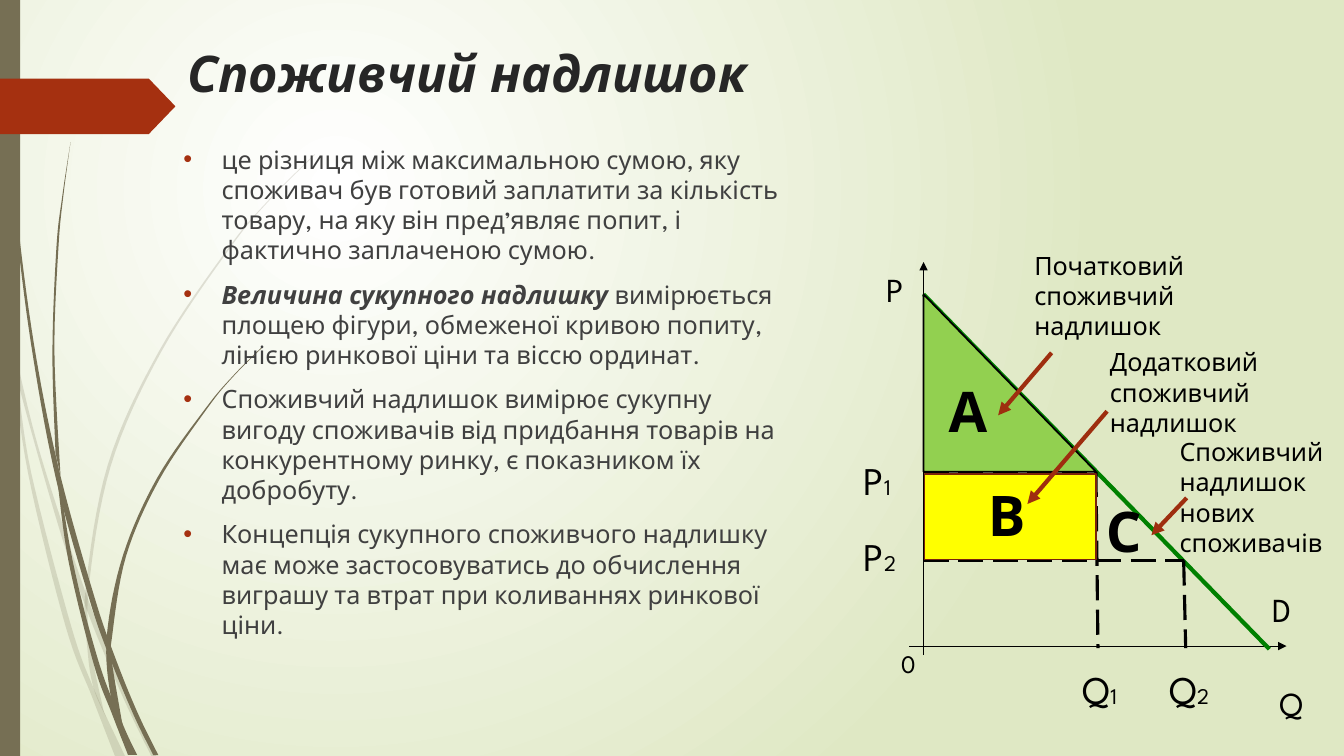
from lxml import etree
from pptx import Presentation
from pptx.dml.color import RGBColor
from pptx.enum.dml import MSO_LINE
from pptx.enum.shapes import MSO_CONNECTOR, MSO_SHAPE
from pptx.enum.text import MSO_ANCHOR, PP_ALIGN
from pptx.oxml.ns import qn
from pptx.util import Cm, Pt

STRAIGHT = MSO_CONNECTOR.STRAIGHT
RECTANGLE, TRIANGLE = MSO_SHAPE.RECTANGLE, MSO_SHAPE.ISOSCELES_TRIANGLE
PENTAGON = MSO_SHAPE.PENTAGON
LONG_DASH = MSO_LINE.LONG_DASH
TOP, LEFT = MSO_ANCHOR.TOP, PP_ALIGN.LEFT

FONT = "League Spartan"
BLACK, OLIVE, RED, ARROW = "000000", "766F54", "A53010", "9E2E0F"

# Content: a run is (text, format)
TITLE = "Споживчий надлишок"
STRONG = {"bold": True, "italic": True}
BULLETS = [
    [("це різниця між максимальною сумою, яку споживач був готовий заплатити за "
      "кількість товару, на яку він пред’являє попит, і фактично заплаченою сумою.", {})],
    [("Величина сукупного надлишку", STRONG),
     (" вимірюється площею фігури, обмеженої кривою попиту, лінією ринкової ціни "
      "та віссю ординат.", {})],
    [("Споживчий надлишок вимірює сукупну вигоду споживачів від придбання товарів "
      "на конкурентному ринку, є показником їх добробуту.", {})],
    [("Концепція сукупного споживчого надлишку має може застосовуватись до "
      "обчислення виграшу та втрат при коливаннях ринкової ціни.", {})],
]

# Key points of the diagram, in inches
AXIS_X, AXIS_Y = 9.16, 6.41
TOP_PRICE, PRICE_1, PRICE_2 = 2.92, 4.68, 5.56
QUANTITY_1, QUANTITY_2 = 10.87, 11.74

# (text, subscript, box, size)
AXIS_LABELS = [
    ("P", "", (8.69, 2.62, 0.31, 0.5), 24),
    ("Q", "", (12.59, 6.73, 0.43, 0.5), 24),
    ("D", "", (12.52, 5.79, 0.5, 0.5), 24),
    ("0", "", (8.84, 6.38, 0.47, 0.4), 18),
    ("P", "1", (8.47, 4.48, 0.61, 0.57), 28),
    ("P", "2", (8.47, 5.23, 0.61, 0.57), 28),
    ("Q", "1", (10.64, 6.55, 0.69, 0.57), 28),
    ("Q", "2", (11.5, 6.55, 0.69, 0.57), 28),
]
AREA_LABELS = [("А", 9.31, 3.69), ("В", 9.7, 4.72), ("С", 10.87, 4.88)]
# (text, box, arrow start, arrow end)
CALLOUTS = [
    ("Початковий споживчий надлишок", (10.16, 2.43, 1.72, 1.01), (10.43, 3.5), (9.9, 4.12)),
    ("Додатковий споживчий надлишок", (10.91, 3.39, 1.72, 1.01), (10.98, 4.08), (10.19, 5)),
    ("Споживчий надлишок нових споживачів", (11.6, 4.28, 1.72, 1.31),
     (11.77, 4.94), (11.42, 5.31)),
]

# Grass blades: one edge downwards, the other back up
PALE_BLADES = [
    ([(0, 2.82), (0.14, 3.45), (0.35, 4.33), (0.62, 5.2), (0.92, 6.07), (1.27, 6.92), (1.55, 7.5)],
     [(1.5, 7.5), (1.23, 6.94), (0.88, 6.1), (0.58, 5.22), (0.17, 3.76), (0, 2.99)]),
    ([(0.11, 3.5), (0.17, 3.76), (0.31, 4.69), (0.7, 6.19), (0.93, 6.83), (1.24, 7.5)],
     [(1.14, 7.5), (0.92, 6.93), (0.65, 6.21), (0.28, 4.7), (0.11, 3.5)]),
    ([(3.12, 1.53), (2.68, 1.97), (2.28, 2.44), (1.58, 3.48), (1.07, 4.61), (0.85, 5.84),
      (0.87, 6.46), (0.93, 6.83), (1.05, 7.11)],
     [(1.03, 7.06), (0.91, 6.46), (0.88, 5.84), (1.1, 4.62), (1.6, 3.49), (2.29, 2.45),
      (2.68, 1.98), (3.12, 1.54)]),
]
DARK_BLADES = [
    ([(0.04, 0), (0.08, 1.09), (0.19, 2.32), (0.36, 3.55), (0.6, 4.72), (0.93, 5.9),
      (1.13, 6.49), (1.36, 7.06), (1.57, 7.49)],
     [(1.52, 7.49), (1.32, 7.08), (1.06, 6.45), (0.88, 5.92), (0.56, 4.77), (0.33, 3.55),
      (0.17, 2.33), (0.07, 1.1), (0.03, 0)]),
    ([(0.55, 4.49), (0.72, 5.56), (0.98, 6.57), (1.22, 7.19), (1.36, 7.49)],
     [(1.27, 7.49), (1.11, 7.08), (0.93, 6.59), (0.68, 5.57), (0.57, 4.77)]),
    ([(0.7, 1.41), (0.62, 1.93), (0.56, 2.45), (0.52, 3.49), (0.55, 4.49)],
     [(0.6, 4.72), (0.54, 3.49), (0.58, 2.45), (0.63, 1.93), (0.7, 1.41)]),
    ([(2.6, 3.44), (2.31, 3.73), (2.04, 4.05), (1.56, 4.74), (1.22, 5.51), (1.06, 6.31),
      (1.1, 6.91), (1.22, 7.19)],
     [(1.21, 7.16), (1.11, 6.56), (1.11, 6.33), (1.25, 5.52), (1.58, 4.76), (2.05, 4.06),
      (2.31, 3.74), (2.61, 3.44)]),
]


def inch(value):
    return Cm(value * 2.54)


def color(value):
    return RGBColor.from_string(value)


def add_run(paragraph, text, size=18, fill=BLACK, bold=False, italic=False):
    run = paragraph.add_run()
    run.text = text
    font = run.font
    font.name, font.size, font.bold, font.italic = FONT, Pt(size), bold, italic
    font.color.rgb = color(fill)


def add_box(box):
    frame = slide.shapes.add_textbox(*map(inch, box)).text_frame
    frame.word_wrap = True
    return frame


def paint(shape, fill, line=None):
    shape.shadow.inherit = False
    shape.fill.solid()
    shape.fill.fore_color.rgb = color(fill)
    if line:
        shape.line.color.rgb = color(line)
        shape.line.width = Pt(1.25)
    else:
        shape.line.fill.background()
    return shape


def add_shape(kind, box, fill, line=None):
    return paint(slide.shapes.add_shape(kind, *map(inch, box)), fill, line)


def add_line(start, end, line=BLACK, width=2.25, dash=None, arrow=False):
    connector = slide.shapes.add_connector(STRAIGHT, *map(inch, start + end))
    connector.line.color.rgb = color(line)
    connector.line.width = Pt(width)
    if dash:
        connector.line.dash_style = dash
    if arrow:
        etree.SubElement(connector.line._get_or_add_ln(), qn("a:tailEnd"), type="triangle")
    etree.SubElement(connector.element.spPr, qn("a:effectLst"))


def smooth_edge(points, steps=8):
    """Points of a Catmull-Rom curve through the given points."""
    padded = [points[0]] + points + [points[-1]]
    curve = [points[0]]
    for a, b, c, d in zip(padded, padded[1:], padded[2:], padded[3:]):
        for step in range(1, steps + 1):
            t = step / steps
            curve.append(tuple(
                (2 * q + (r - p) * t + (2 * p - 5 * q + 4 * r - s) * t ** 2
                 + (3 * q - p - 3 * r + s) * t ** 3) / 2
                for p, q, r, s in zip(a, b, c, d)))
    return curve


def add_blade(edges, alpha=None):
    outline = [(inch(x), inch(y)) for edge in edges for x, y in smooth_edge(edge)]
    builder = slide.shapes.build_freeform(*outline[0])
    builder.add_line_segments(outline[1:], close=True)
    blade = paint(builder.convert_to_shape(), OLIVE)
    if alpha:
        tint = blade.element.spPr.find(qn("a:solidFill"))[0]
        etree.SubElement(tint, qn("a:alpha"), val=str(alpha * 1000))


presentation = Presentation()
presentation.slide_width, presentation.slide_height = inch(13.33), inch(7.5)
slide = presentation.slides.add_slide(presentation.slide_layouts[5])

# Background: round gradient
background = slide.background.fill
background.gradient()
for stop, value in zip(background.gradient_stops, ("FFFFFF", "DFE8C4")):
    stop.color.rgb = color(value)
linear = slide.element.find(".//" + qn("a:lin"))
circle = etree.Element(qn("a:path"), path="circle")
etree.SubElement(circle, qn("a:fillToRect"), l="50000", t="50000", r="100000", b="100000")
linear.getparent().replace(linear, circle)

# Side decoration
for blade_edges in PALE_BLADES:
    add_blade(blade_edges, alpha=20)
for blade_edges in DARK_BLADES:
    add_blade(blade_edges)
add_shape(RECTANGLE, (0, 0, 0.2, 7.5), OLIVE)
add_shape(PENTAGON, (0, 0.78, 1.74, 0.55), RED).adjustments[0] = 0.48

# Title
title = slide.shapes.title
title.left, title.top, title.width, title.height = map(inch, (1.76, 0.37, 9.75, 1.4))
title.text_frame.vertical_anchor = TOP
title.text_frame.paragraphs[0].alignment = LEFT
add_run(title.text_frame.paragraphs[0], TITLE, size=36, fill="262626", **STRONG)

# Bulleted text
body = add_box((1.72, 1.38, 6.33, 5.81))
for index, runs in enumerate(BULLETS):
    paragraph = body.add_paragraph() if index else body.paragraphs[0]
    properties = paragraph._p.get_or_add_pPr()
    properties.set("marL", str(inch(0.38)))
    properties.set("indent", str(-inch(0.38)))
    bullet_color = etree.SubElement(properties, qn("a:buClr"))
    etree.SubElement(bullet_color, qn("a:srgbClr"), val=RED)
    etree.SubElement(properties, qn("a:buFont"), typeface="Arial")
    etree.SubElement(properties, qn("a:buChar"), char="•")
    if index:
        paragraph.space_before = Pt(10)
    for text, style in runs:
        add_run(paragraph, text, fill="404040", **style)

# Axes, demand line and guides
add_line((9.02, AXIS_Y), (12.76, AXIS_Y), width=0.75, arrow=True)
add_line((AXIS_X, 6.5), (AXIS_X, 2.6), width=0.75, arrow=True)
add_line((AXIS_X, TOP_PRICE), (12.59, 6.44), line="008000", width=3)
for price, quantity in ((PRICE_1, QUANTITY_1), (PRICE_2, QUANTITY_2)):
    add_line((AXIS_X, price), (quantity, price), dash=LONG_DASH)
    add_line((quantity, price), (quantity + 0.02, 6.43), dash=LONG_DASH)

# Surplus areas
width = QUANTITY_1 - AXIS_X
initial = add_shape(TRIANGLE, (AXIS_X, TOP_PRICE, width, PRICE_1 - TOP_PRICE), "92D050", BLACK)
initial.adjustments[0] = 0
add_shape(RECTANGLE, (AXIS_X + 0.01, PRICE_1 + 0.02, width - 0.01, 0.85), "FFFF00", "7A240C")

# Labels
for text, subscript, box, size in AXIS_LABELS:
    paragraph = add_box(box).paragraphs[0]
    add_run(paragraph, text, size=size)
    if subscript:
        add_run(paragraph, subscript, size=16)
for text, left, top in AREA_LABELS:
    add_run(add_box((left, top, 0.59, 0.77)).paragraphs[0], text, size=40, bold=True)
for text, box, start, end in CALLOUTS:
    add_run(add_box(box).paragraphs[0], text)
    add_line(start, end, line=ARROW, width=3, arrow=True)

presentation.save("out.pptx")
